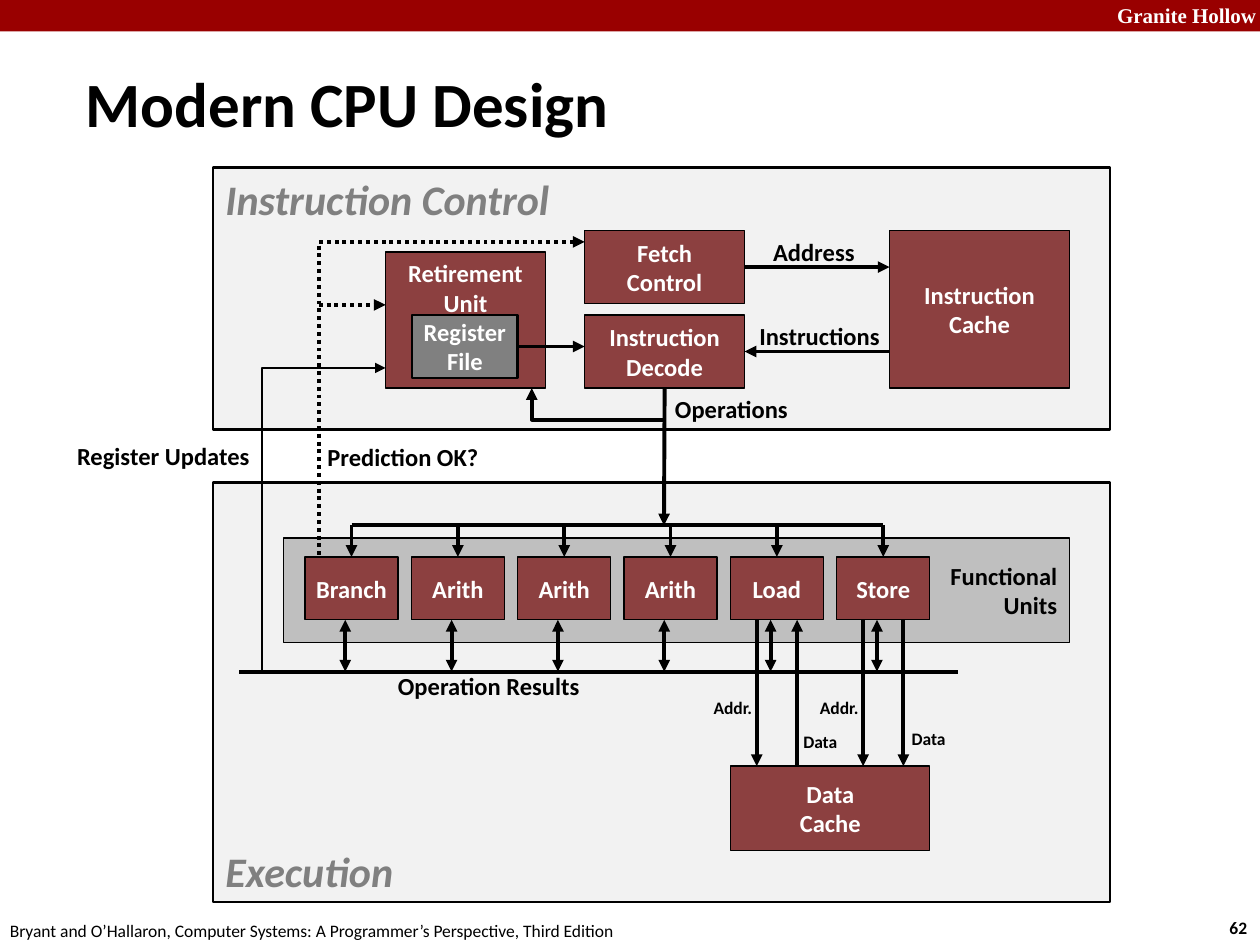
from dataclasses import dataclass

from lxml import etree
from pptx import Presentation
from pptx.dml.color import RGBColor
from pptx.enum.dml import MSO_LINE
from pptx.enum.shapes import MSO_CONNECTOR, MSO_SHAPE
from pptx.enum.text import MSO_ANCHOR, MSO_AUTO_SIZE, PP_ALIGN
from pptx.oxml.ns import qn
from pptx.util import Inches, Pt

RECT, STRAIGHT, DOTTED = MSO_SHAPE.RECTANGLE, MSO_CONNECTOR.STRAIGHT, MSO_LINE.ROUND_DOT
LEFT, CENTER, RIGHT = PP_ALIGN.LEFT, PP_ALIGN.CENTER, PP_ALIGN.RIGHT
TOP, MIDDLE, BOTTOM = MSO_ANCHOR.TOP, MSO_ANCHOR.MIDDLE, MSO_ANCHOR.BOTTOM
SITE_TOP, SITE_BOTTOM, SITE_RIGHT = 0, 2, 3


@dataclass(frozen=True)
class Theme:
    font: str = "Calibri"
    banner_font: str = "Times New Roman"
    banner: str = "990000"
    panel: str = "F2F2F2"
    band: str = "BFBFBF"
    unit: str = "8C4040"
    gray: str = "808080"
    ink: str = "000000"
    white: str = "FFFFFF"
    title_size: int = 36
    heading_size: int = 24
    body_size: int = 14
    banner_size: int = 12
    small_size: int = 10
    thin: float = 0.75
    medium: float = 1.5
    thick: float = 2.25


class Diagram:
    """Draws on one slide in the style of a theme; lengths are in inches."""

    def __init__(self, slide, theme):
        self.slide, self.shapes, self.theme = slide, slide.shapes, theme

    def set_text(self, frame, text, size, color, align, bold=True, italic=False, font=None):
        frame.text = text
        for paragraph in frame.paragraphs:
            paragraph.alignment = align
            paragraph.font.name = font or self.theme.font
            paragraph.font.size = Pt(size)
            paragraph.font.bold = bold
            paragraph.font.italic = italic
            paragraph.font.color.rgb = RGBColor.from_string(color)

    def title(self, text, x, y, w, h):
        title = self.shapes.title
        title.left, title.top, title.width, title.height = map(Inches, (x, y, w, h))
        title.text_frame.vertical_anchor = MIDDLE
        self.set_text(title.text_frame, text, self.theme.title_size, self.theme.ink, LEFT)

    def rect(self, x, y, w, h, fill, border=None):
        rect = self.shapes.add_shape(RECT, *map(Inches, (x, y, w, h)))
        rect.shadow.inherit = False
        rect.fill.solid()
        rect.fill.fore_color.rgb = RGBColor.from_string(fill)
        if border:
            self.stroke(rect, border)
        else:
            rect.line.fill.background()
        return rect

    def panel(self, heading, x, y, w, h, anchor):
        panel = self.rect(x, y, w, h, self.theme.panel, self.theme.medium)
        panel.text_frame.word_wrap = False
        panel.text_frame.vertical_anchor = anchor
        self.set_text(panel.text_frame, heading, self.theme.heading_size, self.theme.gray,
                      LEFT, italic=True)

    def block(self, text, x, y, w, h, fill=None, color=None, align=CENTER,
              anchor=MIDDLE, border=None):
        block = self.rect(x, y, w, h, fill or self.theme.unit, border or self.theme.thin)
        block.text_frame.word_wrap = False
        block.text_frame.vertical_anchor = anchor
        self.set_text(block.text_frame, text, self.theme.body_size,
                      color or self.theme.white, align)
        return block

    def label(self, text, x, y, w, h=0.34, size=None, color=None, align=CENTER,
              wrap=False, **font):
        frame = self.shapes.add_textbox(*map(Inches, (x, y, w, h))).text_frame
        frame.word_wrap = wrap
        frame.auto_size = MSO_AUTO_SIZE.SHAPE_TO_FIT_TEXT
        self.set_text(frame, text, size or self.theme.body_size, color or self.theme.ink,
                      align, **font)

    def stroke(self, shape, width, dash=None, head=False, tail=False):
        """Style an outline; head and tail are arrowheads at its start and end."""
        shape.line.color.rgb = RGBColor.from_string(self.theme.ink)
        shape.line.width = Pt(width)
        if dash:
            shape.line.dash_style = dash
        outline = shape._element.spPr.find(qn("a:ln"))
        for tag, shown in (("a:headEnd", head), ("a:tailEnd", tail)):
            if shown:
                etree.SubElement(outline, qn(tag), type="triangle")

    def line(self, start, end, begin=None, finish=None, dash=None, head=False, tail=True):
        """Draw a straight line; begin and finish are (shape, site) pairs to join."""
        line = self.shapes.add_connector(STRAIGHT, *map(Inches, (*start, *end)))
        if begin:
            line.begin_connect(*begin)
        if finish:
            line.end_connect(*finish)
        self.stroke(line, self.theme.thick, dash, head, tail)
        etree.SubElement(line._element.spPr, qn("a:effectLst"))

    def bent(self, *points, width=None, dash=None, head=False, tail=False):
        start, *rest = [tuple(map(Inches, point)) for point in points]
        builder = self.shapes.build_freeform(*start)
        builder.add_line_segments(rest, close=False)
        route = builder.convert_to_shape()
        route.shadow.inherit = False
        route.fill.background()
        self.stroke(route, width or self.theme.thick, dash, head, tail)


def draw_frame(d):
    t = d.theme
    d.rect(0, 0, 10, 0.25, t.banner)
    d.label("Granite Hollow", 8.64, -0.03, 1.43, 0.3, t.banner_size, t.white,
            RIGHT, wrap=True, font=t.banner_font)
    d.label("62", 9.66, 7.23, 0.37, 0.27, t.small_size, align=LEFT)
    d.label("Bryant and O’Hallaron, Computer Systems: A Programmer’s Perspective, "
            "Third Edition", -0.02, 7.25, 5.08, 0.27, t.small_size, align=LEFT, bold=False)
    d.title("Modern CPU Design", 0.58, 0.5, 6.41, 0.63)


def draw_control(d):
    t = d.theme
    d.panel("Instruction Control", 1.69, 1.33, 7.12, 2.08, TOP)
    d.block("Instruction\nCache", 7.06, 1.83, 1.43, 1.25)
    fetch = d.block("Fetch\nControl", 4.64, 1.83, 1.27, 0.58)
    decode = d.block("Instruction\nDecode", 4.64, 2.5, 1.27, 0.58)
    d.block("Retirement\nUnit", 3.06, 2, 1.27, 1.08, anchor=TOP)
    registers = d.block("Register\nFile", 3.27, 2.5, 0.84, 0.5, t.gray, border=t.medium)
    d.line((5.91, 2.12), (7.06, 2.12), begin=(fetch, SITE_RIGHT))
    d.line((7.06, 2.79), (5.91, 2.79), finish=(decode, SITE_RIGHT))
    d.line((4.11, 2.75), (4.64, 2.75), begin=(registers, SITE_RIGHT))
    d.line((5.27, 3.08), (5.27, 4.17), begin=(decode, SITE_BOTTOM))
    d.bent((5.27, 3.33), (4.22, 3.33), (4.22, 3.08), tail=True)
    d.label("Address", 6.03, 1.83, 0.86)
    d.label("Instructions", 5.92, 2.5, 1.17)
    d.label("Operations", 5.25, 3.08, 1.11)


def draw_execution(d):
    t = d.theme
    unit_top, unit_bottom, feed_y, results_y, cache_top = 4.42, 4.92, 4.17, 5.33, 6.08
    unit_width, first, last = 0.74, 2.42, 6.64
    names = ["Branch", "Arith", "Arith", "Arith", "Load", "Store"]
    pitch = (last - first) / (len(names) - 1)

    d.panel("Execution", 1.69, 3.83, 7.12, 3.33, BOTTOM)
    d.block("Functional\nUnits", 2.25, 4.27, 6.24, 0.83, t.band, t.ink, RIGHT)
    d.block("Data\nCache", 5.8, cache_top, 1.58, 0.67)
    d.line((first + unit_width / 2, feed_y), (last + unit_width / 2, feed_y), tail=False)
    d.line((1.9, results_y), (7.6, results_y), tail=False)
    for i, name in enumerate(names):
        x = first + i * pitch
        center, result_x = x + unit_width / 2, x + 0.32
        unit = d.block(name, x, unit_top, unit_width, unit_bottom - unit_top)
        d.line((center, feed_y), (center, unit_top), finish=(unit, SITE_TOP))
        d.line((result_x, unit_bottom), (result_x, results_y), head=True)
        if name in ("Load", "Store"):
            address_x, data_x = x + 0.21, x + 0.53
            d.line((address_x, unit_bottom), (address_x, cache_top))
            ends = [(data_x, unit_bottom), (data_x, cache_top)]
            d.line(*(ends[::-1] if name == "Load" else ends))
            d.label("Addr.", x - 0.24, 5.48, 0.52, 0.27, t.small_size)
    d.label("Data", 6.27, 5.75, 0.48, 0.27, t.small_size)
    d.label("Data", 7.13, 5.73, 0.48, 0.27, t.small_size)
    d.label("Operation Results", 3.06, 5.28, 1.66, align=LEFT)


def draw_feedback(d):
    d.bent((4.64, 1.92), (2.53, 1.92), (2.53, 4.42), dash=DOTTED, head=True)
    d.line((2.53, 2.42), (3.06, 2.42), dash=DOTTED)
    d.bent((3.06, 2.92), (2.08, 2.92), (2.08, 5.33), width=d.theme.medium, head=True)
    d.label("Prediction OK?", 2.5, 3.46, 1.41, align=LEFT)
    d.label("Register Updates", 0.5, 3.45, 1.58, align=RIGHT)


def main():
    deck = Presentation()
    deck.slide_width, deck.slide_height = Inches(10), Inches(7.5)
    title_only = deck.slide_layouts[5]
    diagram = Diagram(deck.slides.add_slide(title_only), Theme())
    draw_frame(diagram)
    draw_execution(diagram)
    draw_control(diagram)
    draw_feedback(diagram)
    deck.save("out.pptx")


if __name__ == "__main__":
    main()
